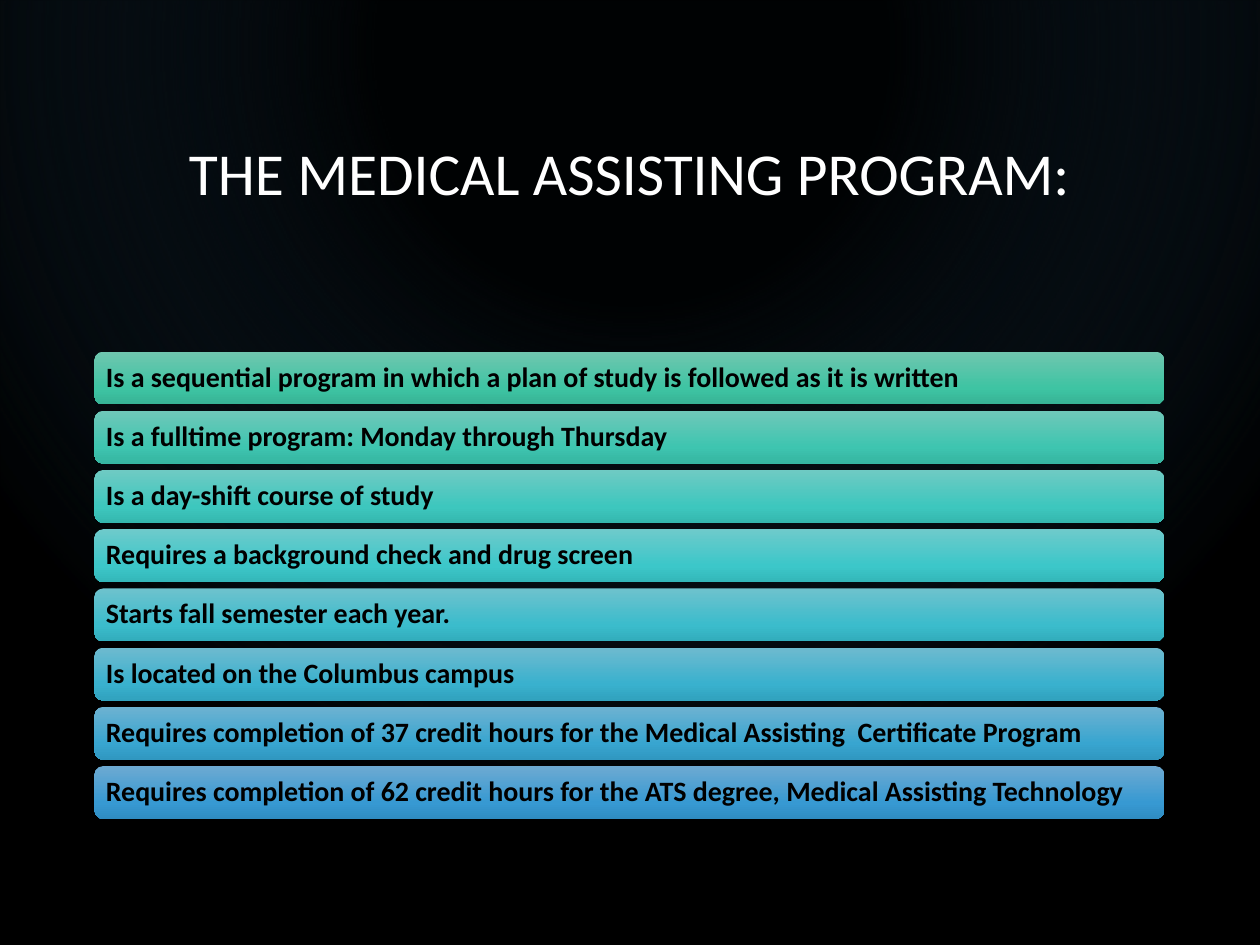
from lxml import etree
from pptx import Presentation
from pptx.dml.color import RGBColor
from pptx.enum.shapes import MSO_SHAPE
from pptx.enum.text import MSO_ANCHOR, PP_ALIGN
from pptx.oxml.ns import qn
from pptx.util import Inches, Pt

RECTANGLE, ROUNDED = MSO_SHAPE.RECTANGLE, MSO_SHAPE.ROUNDED_RECTANGLE
MIDDLE = MSO_ANCHOR.MIDDLE
LEFT, CENTER = PP_ALIGN.LEFT, PP_ALIGN.CENTER
BLACK = RGBColor(0x00, 0x00, 0x00)
WHITE = RGBColor(0xFF, 0xFF, 0xFF)
GLOW_BLUE = RGBColor(0x1F, 0x44, 0x5F)
FONT = "Calibri"
MARGIN, CONTENT_WIDTH = Inches(0.75), Inches(8.49)

# Each bar: text, then its top, lower and bottom gradient colours
FACTS = [
    ("Is a sequential program in which a plan of study is followed as it is written",
     RGBColor(0x70, 0xC6, 0xAF), RGBColor(0x3E, 0xC4, 0xA3), RGBColor(0x37, 0xB3, 0x95)),
    ("Is a fulltime program: Monday through Thursday",
     RGBColor(0x6F, 0xC8, 0xB9), RGBColor(0x3E, 0xC5, 0xB0), RGBColor(0x36, 0xB5, 0xA1)),
    ("Is a day-shift course of study",
     RGBColor(0x6F, 0xCA, 0xC3), RGBColor(0x3D, 0xC7, 0xBE), RGBColor(0x35, 0xB7, 0xAE)),
    ("Requires a background check and drug screen",
     RGBColor(0x6E, 0xCA, 0xCB), RGBColor(0x3C, 0xC7, 0xC9), RGBColor(0x34, 0xB7, 0xB9)),
    ("Starts fall semester each year.",
     RGBColor(0x6E, 0xC2, 0xCD), RGBColor(0x3B, 0xBC, 0xCC), RGBColor(0x32, 0xAD, 0xBC)),
    ("Is located on the Columbus campus",
     RGBColor(0x6E, 0xBA, 0xCF), RGBColor(0x39, 0xB1, 0xCE), RGBColor(0x31, 0xA2, 0xBE)),
    ("Requires completion of 37 credit hours for the Medical Assisting  Certificate Program",
     RGBColor(0x6D, 0xB2, 0xD1), RGBColor(0x38, 0xA5, 0xD0), RGBColor(0x30, 0x97, 0xC0)),
    ("Requires completion of 62 credit hours for the ATS degree, Medical Assisting Technology",
     RGBColor(0x6D, 0xAA, 0xD2), RGBColor(0x37, 0x99, 0xD2), RGBColor(0x2F, 0x8C, 0xC2)),
]
BAR_TOP, BAR_PITCH, BAR_HEIGHT = 2.79, 0.47, 0.42


def add_gradient_shape(preset, left, top, width, height, stops, radial=False):
    """Add a borderless shape; stops are (position %, colour, opacity %)."""
    shape = slide.shapes.add_shape(preset, left, top, width, height)
    shape.shadow.inherit = False
    shape.line.fill.background()
    gradient = etree.Element(qn("a:gradFill"), rotWithShape="1")
    stop_list = etree.SubElement(gradient, qn("a:gsLst"))
    for position, color, opacity in stops:
        stop = etree.SubElement(stop_list, qn("a:gs"), pos=str(position * 1000))
        rgb = etree.SubElement(stop, qn("a:srgbClr"), val=str(color))
        if opacity < 100:
            etree.SubElement(rgb, qn("a:alpha"), val=str(opacity * 1000))
    if radial:
        path = etree.SubElement(gradient, qn("a:path"), path="circle")
        etree.SubElement(path, qn("a:fillToRect"), l="50000", t="5000", r="50000", b="95000")
    else:
        etree.SubElement(gradient, qn("a:lin"), ang="5400000", scaled="0")
    shape.element.spPr.find(qn("a:prstGeom")).addnext(gradient)
    return shape


def set_text(frame, text, size, color, alignment, bold=False):
    frame.text = text
    frame.word_wrap = True
    frame.vertical_anchor = MIDDLE
    paragraph = frame.paragraphs[0]
    paragraph.alignment = alignment
    paragraph.line_spacing = 0.9
    paragraph.font.name = FONT
    paragraph.font.size = Pt(size)
    paragraph.font.bold = bold
    paragraph.font.color.rgb = color


prs = Presentation()
prs.slide_width, prs.slide_height = Inches(10), Inches(7.5)
slide = prs.slides.add_slide(prs.slide_layouts[5])
slide.background.fill.solid()
slide.background.fill.fore_color.rgb = BLACK

glow = add_gradient_shape(RECTANGLE, 0, 0, prs.slide_width, prs.slide_height,
                          [(32, GLOW_BLUE, 3), (100, BLACK, 70)], radial=True)
title = slide.shapes.title
title.element.addprevious(glow.element)  # the glow lies behind the title
title.left, title.top = MARGIN, Inches(0.67)
title.width, title.height = CONTENT_WIDTH, Inches(1.45)
set_text(title.text_frame, "THE MEDICAL ASSISTING PROGRAM:", 34, WHITE, CENTER)

for row, (fact, top_color, lower_color, bottom_color) in enumerate(FACTS):
    bar = add_gradient_shape(
        ROUNDED, MARGIN, Inches(BAR_TOP + row * BAR_PITCH), CONTENT_WIDTH, Inches(BAR_HEIGHT),
        [(0, top_color, 100), (69, lower_color, 100), (100, bottom_color, 100)])
    frame = bar.text_frame
    frame.margin_left = frame.margin_right = Inches(0.07)
    frame.margin_top = frame.margin_bottom = Inches(0.07)
    set_text(frame, fact, 16, BLACK, LEFT, bold=True)

prs.save("out.pptx")
